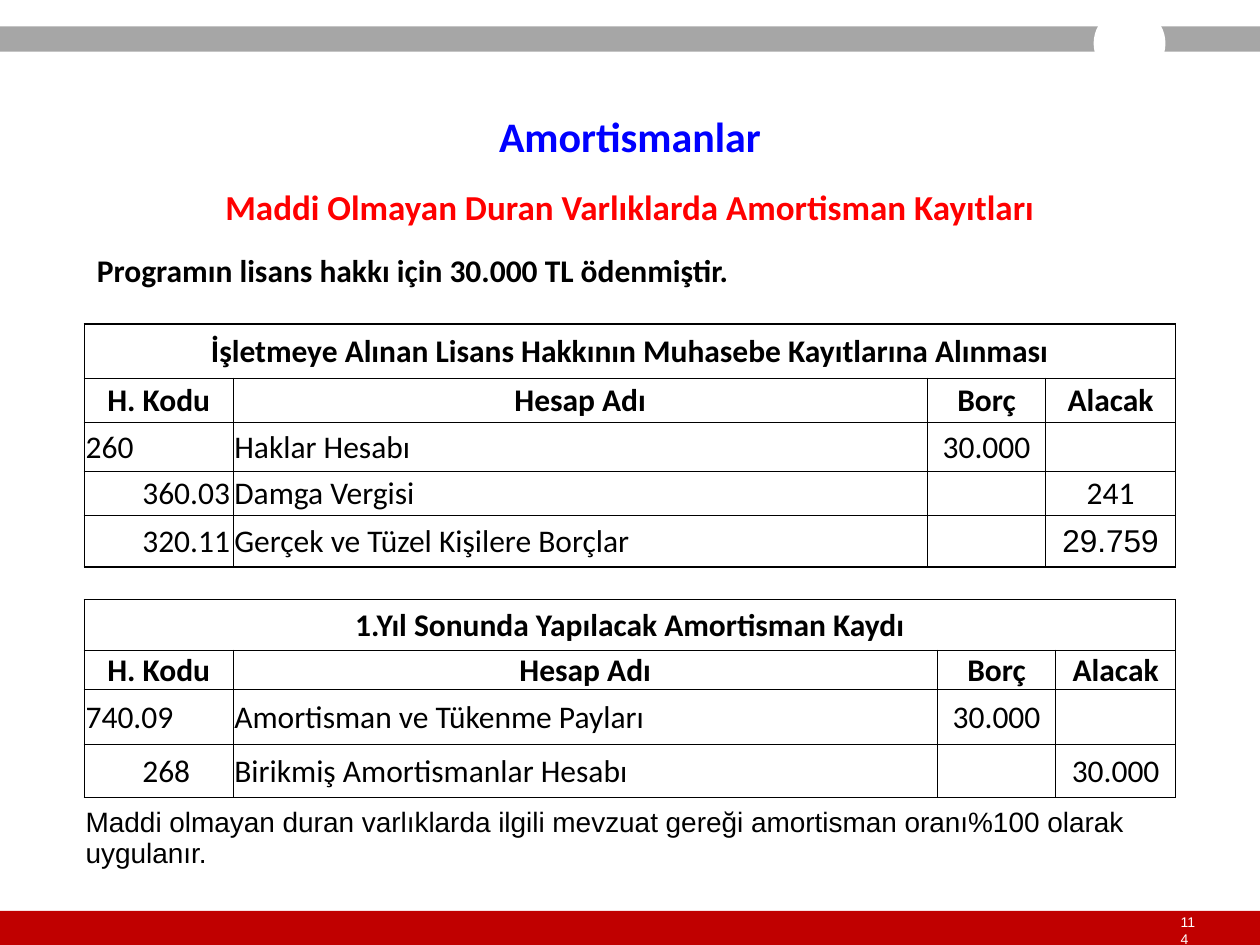
from lxml.etree import SubElement
from pptx import Presentation
from pptx.dml.color import RGBColor
from pptx.enum.shapes import MSO_SHAPE
from pptx.enum.text import MSO_ANCHOR, PP_ALIGN
from pptx.oxml.ns import qn
from pptx.util import Inches, Pt

CALIBRI, ARIAL = "Calibri", "Arial"
CENTER, LEFT = PP_ALIGN.CENTER, PP_ALIGN.LEFT
TABLE_LEFT, TABLE_WIDTH = 0.67, 8.66
CODE_INDENT = 0.46
HEADINGS = ["H. Kodu", "Hesap Adı", "Borç", "Alacak"]


def rgb(color):
    return RGBColor.from_string(color)


def write(tf, text, size=18, font=CALIBRI, color="000000", bold=False, align=LEFT):
    p = tf.paragraphs[0]
    p.alignment = align
    r = p.add_run()
    r.text = text
    r.font.size = Pt(size)
    r.font.name = font
    r.font.bold = bold
    r.font.color.rgb = rgb(color)


def add_block(s, kind, box, fill):
    sp = s.shapes.add_shape(kind, *map(Inches, box))
    sp.shadow.inherit = False
    sp.fill.solid()
    sp.fill.fore_color.rgb = rgb(fill)
    sp.line.fill.background()
    return sp


def add_text(s, box, text, **fmt):
    tf = s.shapes.add_textbox(*map(Inches, box)).text_frame
    tf.word_wrap = True
    write(tf, text, **fmt)
    return tf


def set_borders(cell, **widths):
    """Draw each side (L, R, T, B) in black; a width of 0 hides it."""
    tcPr = cell._tc.get_or_add_tcPr()
    for side in "LRTB":
        width = widths[side]
        ln = SubElement(tcPr, qn(f"a:ln{side}"), w=str(Pt(width)))
        if width:
            fill = SubElement(ln, qn("a:solidFill"))
            SubElement(fill, qn("a:srgbClr"), val="000000")
        else:
            SubElement(ln, qn("a:noFill"))


def format_cell(cell):
    cell.margin_left = cell.margin_right = cell.margin_top = Inches(0.01)
    cell.margin_bottom = 0
    cell.vertical_anchor = MSO_ANCHOR.MIDDLE
    cell.fill.background()


def add_journal(s, top, cols, heights, title, entries, heavy, note=None):
    """Add a journal table; heavy lists the horizontal rules drawn at 1 pt."""
    ruled = len(entries) + 2
    frame = s.shapes.add_table(len(heights), len(cols), Inches(TABLE_LEFT), Inches(top),
                               Inches(TABLE_WIDTH), Inches(sum(heights)))
    table = frame.table
    table.first_row = table.horz_banding = False
    for col, width in zip(table.columns, cols):
        col.width = Inches(width)
    for row, height in zip(table.rows, heights):
        row.height = Inches(height)

    def rule(y):
        return 0 if y > ruled else 1 if y in heavy else 0.5

    for y in range(len(heights)):
        for x in range(len(cols)):
            cell = table.cell(y, x)
            left, right = (1 if x == 0 else 0.5), (1 if x == len(cols) - 1 else 0.5)
            if y >= ruled:
                left = right = 0
            set_borders(cell, L=left, R=right, T=rule(y), B=rule(y + 1))
            format_cell(cell)

    table.cell(0, 0).merge(table.cell(0, 3))
    write(table.cell(0, 0).text_frame, title, bold=True, align=CENTER)
    for x, heading in enumerate(HEADINGS):
        write(table.cell(1, x).text_frame, heading, bold=True, align=CENTER)
    for y, entry in enumerate(entries, 2):
        for x, text in enumerate(entry):
            if text:
                font = ARIAL if text == "29.759" else CALIBRI
                write(table.cell(y, x).text_frame, text, font=font,
                      align=CENTER if x > 1 else LEFT)
        if entry[3]:
            table.cell(y, 0).margin_left = Inches(CODE_INDENT)
    if note:
        table.cell(ruled, 0).merge(table.cell(ruled, 3))
        write(table.cell(ruled, 0).text_frame, note, size=16, font=ARIAL)


def add_frame(s):
    """Add the top and bottom bands with the slide number."""
    add_block(s, MSO_SHAPE.RECTANGLE, (0, 7.23, 10, 0.3), "C00000")
    tf = add_text(s, (9.37, 7.32, 0.14, 0.13), "114", size=8, font=ARIAL, color="FFFFFF")
    tf.margin_left = tf.margin_right = tf.margin_top = tf.margin_bottom = 0
    tf.vertical_anchor = MSO_ANCHOR.MIDDLE
    add_block(s, MSO_SHAPE.RECTANGLE, (0, 0.21, 10, 0.2), "A6A6A6")
    add_block(s, MSO_SHAPE.OVAL, (8.68, 0.06, 0.57, 0.57), "FFFFFF")


def main():
    prs = Presentation()
    prs.slide_width, prs.slide_height = Inches(10), Inches(7.5)
    s = prs.slides.add_slide(prs.slide_layouts[6])
    add_frame(s)
    add_text(s, (0, 1.42, 10, 0.44), "Maddi Olmayan Duran Varlıklarda Amortisman Kayıtları",
             size=20, color="FF0000", bold=True, align=CENTER)
    add_journal(s, 2.57, [1.18, 5.51, 0.94, 1.03], [0.43, 0.35, 0.39, 0.35, 0.41],
                "İşletmeye Alınan Lisans Hakkının Muhasebe Kayıtlarına Alınması",
                [["260", "Haklar Hesabı", "30.000", ""],
                 ["360.03", "Damga Vergisi", "", "241"],
                 ["320.11", "Gerçek ve Tüzel Kişilere Borçlar", "", "29.759"]],
                heavy=(0, 4, 5))
    add_journal(s, 4.76, [1.18, 5.59, 0.94, 0.95], [0.4, 0.3, 0.44, 0.42, 0.64],
                "1.Yıl Sonunda Yapılacak Amortisman Kaydı",
                [["740.09", "Amortisman ve Tükenme Payları", "30.000", ""],
                 ["268", "Birikmiş Amortismanlar Hesabı", "", "30.000"]],
                heavy=(0, 4),
                note="Maddi olmayan duran varlıklarda ilgili mevzuat gereği "
                     "amortisman oranı%100 olarak uygulanır.")
    add_text(s, (TABLE_LEFT, 1.94, TABLE_WIDTH, 0.4),
             "Programın lisans hakkı için 30.000 TL ödenmiştir.", bold=True)
    title = add_block(s, MSO_SHAPE.RECTANGLE, (0, 0.88, 10, 0.39), "FFFFFF")
    write(title.text_frame, "Amortismanlar", size=24, color="0000FF", bold=True, align=CENTER)
    prs.save("out.pptx")


if __name__ == "__main__":
    main()
